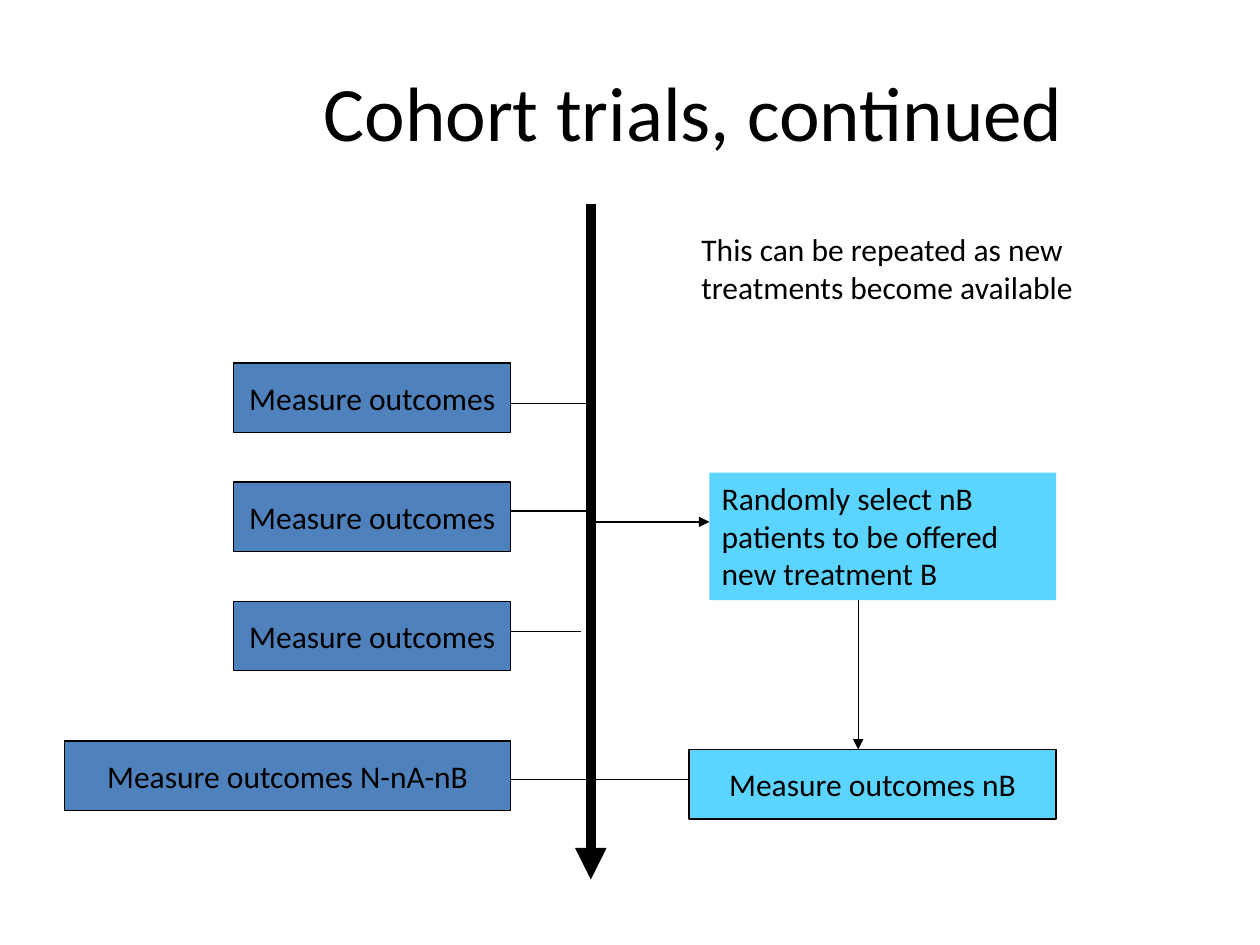
from lxml.etree import SubElement
from pptx import Presentation
from pptx.dml.color import RGBColor
from pptx.enum.shapes import MSO_CONNECTOR, MSO_SHAPE
from pptx.enum.text import MSO_ANCHOR, PP_ALIGN
from pptx.oxml.ns import qn
from pptx.util import Cm, Pt

BLACK, BLUE, CYAN = "000000", "4F81BD", "5BD4FF"
BOX_H = 1.4
AXIS_X = 11.91


def rgb(value):
    """Turn a hex string into a colour."""
    return RGBColor.from_string(value)


def set_text(tf, text, size=18, align=PP_ALIGN.LEFT, anchor=MSO_ANCHOR.TOP, wrap=True):
    """Write one formatted paragraph into a text frame."""
    tf.text = text
    tf.word_wrap = wrap
    tf.vertical_anchor = anchor
    p = tf.paragraphs[0]
    p.alignment = align
    p.font.name = "Calibri"
    p.font.size = Pt(size)
    p.font.color.rgb = rgb(BLACK)


def add_box(slide, x, y, w, h, fill, outlined=True):
    """Add a filled rectangle and return it."""
    sp = slide.shapes.add_shape(MSO_SHAPE.RECTANGLE, Cm(x), Cm(y), Cm(w), Cm(h))
    sp.shadow.inherit = False
    sp.fill.solid()
    sp.fill.fore_color.rgb = rgb(fill)
    if outlined:
        sp.line.color.rgb = rgb(BLACK)
        sp.line.width = Pt(0.75)
    else:
        sp.line.fill.background()
    return sp


def add_outcome(slide, x, y, w, text, fill):
    """Add an outlined box with a centred outcome label."""
    sp = add_box(slide, x, y, w, BOX_H, fill)
    set_text(sp.text_frame, text, align=PP_ALIGN.CENTER, anchor=MSO_ANCHOR.MIDDLE, wrap=False)


def add_line(slide, x1, y1, x2, y2, width=0.75, arrow=False):
    """Add a straight black line, with an arrowhead at its end if asked."""
    line = slide.shapes.add_connector(MSO_CONNECTOR.STRAIGHT, Cm(x1), Cm(y1), Cm(x2), Cm(y2))
    line.line.color.rgb = rgb(BLACK)
    line.line.width = Pt(width)
    if arrow:
        SubElement(line.line._get_or_add_ln(), qn("a:tailEnd"), type="triangle")
    SubElement(line._element.spPr, qn("a:effectLst"))


def add_title(slide, x, y, w, h):
    """Place and format the title placeholder."""
    sp = slide.shapes.title
    sp.left, sp.top, sp.width, sp.height = Cm(x), Cm(y), Cm(w), Cm(h)
    set_text(sp.text_frame, "Cohort trials, continued", 44, PP_ALIGN.CENTER, MSO_ANCHOR.MIDDLE)


def add_cohort(slide, x, y, w, h):
    """Add the column of cohort outcomes and their links to the timeline."""
    right = x + w
    narrow = 5.59
    links = [(0.81, AXIS_X), (0.58, AXIS_X), (0.61, AXIS_X - 0.2)]
    for i, (offset, end) in enumerate(links):
        top = y + 2.4 * i
        add_outcome(slide, right - narrow, top, narrow, "Measure outcomes", BLUE)
        add_line(slide, right, top + offset, end, top + offset)
    add_outcome(slide, x, y + h - BOX_H, w, "Measure outcomes N-nA-nB", BLUE)


def add_treatment(slide, x, y, w, h):
    """Add the note, the selection of patients and their outcomes."""
    select_x, select_y, select_h = x + 0.41, y + 5.01, 2.57
    outcome_y = y + h - BOX_H
    add_line(slide, AXIS_X, select_y + 0.99, select_x, select_y + 0.99, arrow=True)
    add_outcome(slide, x, outcome_y, w, "Measure outcomes nB", CYAN)
    add_line(slide, 10.3, outcome_y + 0.61, x, outcome_y + 0.61)
    add_line(slide, x + 3.41, select_y + 1.8, x + 3.41, outcome_y, arrow=True)
    sp = add_box(slide, select_x, select_y, w - 0.41, select_h, CYAN, outlined=False)
    set_text(sp.text_frame, "Randomly select nB patients to be offered new treatment B")
    note = slide.shapes.add_textbox(Cm(x), Cm(y), Cm(9), Cm(1.8))
    set_text(note.text_frame, "This can be repeated as new treatments become available")


def main():
    """Build and save the slide."""
    prs = Presentation()
    prs.slide_width, prs.slide_height = Cm(25.4), Cm(19.05)
    slide = prs.slides.add_slide(prs.slide_layouts[5])
    add_title(slide, 4.24, 0.53, 19.48, 3.4)
    add_line(slide, AXIS_X, 4.11, AXIS_X, 17.73, width=6, arrow=True)
    add_cohort(slide, 1.3, 7.32, 9, 9.02)
    add_treatment(slide, 13.89, 4.52, 7.4, 11.99)
    prs.save("out.pptx")


if __name__ == "__main__":
    main()
